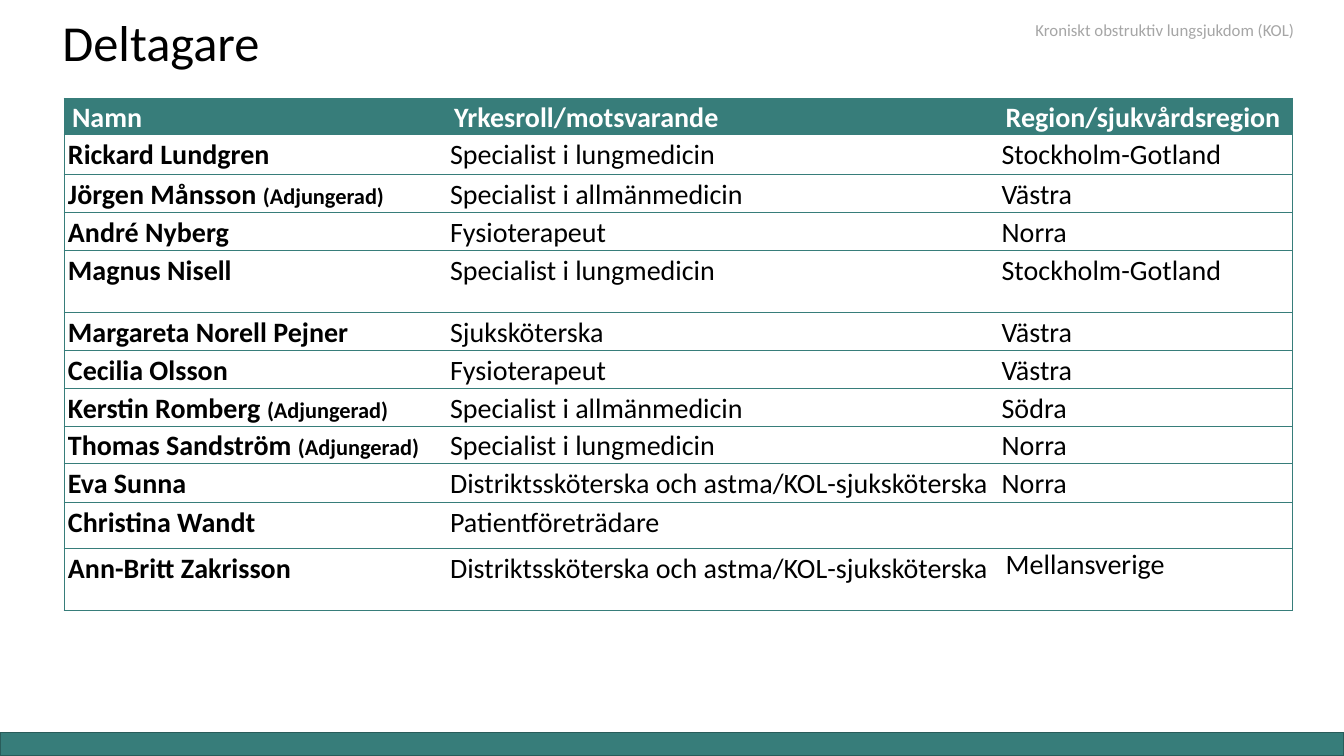
import pptx
import pptx.dml.color
import pptx.enum.shapes
import pptx.enum.text
import pptx.oxml
import pptx.oxml.ns
import pptx.util

Pt = pptx.util.Pt
ANCHOR = pptx.enum.text.MSO_ANCHOR
WIDTH, HEIGHT = pptx.util.Inches(13.33), pptx.util.Inches(7.5)
TEAL, DARK_TEAL, BLACK, WHITE, GREY = "377D7A", "295C5A", "000000", "FFFFFF", "A6A6A6"

# Table columns in % of slide width, rows in % of slide height
COLUMNS = [28.43, 41.04, 21.91]
ROWS = [4.75, 5.33, 5, 5, 8.27, 5, 5, 5, 5, 5.07, 6.13, 8.27]
HEADER = ["Namn", "Yrkesroll/motsvarande", "Region/sjukvårdsregion"]
ADJUNCT = "(Adjungerad)"
PARTICIPANTS = [
    ("Rickard Lundgren", "Specialist i lungmedicin", "Stockholm-Gotland"),
    ("Jörgen Månsson " + ADJUNCT, "Specialist i allmänmedicin", "Västra"),
    ("André Nyberg", "Fysioterapeut", "Norra"),
    ("Magnus Nisell", "Specialist i lungmedicin", "Stockholm-Gotland"),
    ("Margareta Norell Pejner", "Sjuksköterska", "Västra"),
    ("Cecilia Olsson", "Fysioterapeut", "Västra"),
    ("Kerstin Romberg " + ADJUNCT, "Specialist i allmänmedicin", "Södra"),
    ("Thomas Sandström " + ADJUNCT, "Specialist i lungmedicin", "Norra"),
    ("Eva Sunna", "Distriktssköterska och astma/KOL-sjuksköterska", "Norra"),
    ("Christina Wandt", "Patientföreträdare", ""),
    ("Ann-Britt Zakrisson", "Distriktssköterska och astma/KOL-sjuksköterska", "Mellansverige"),
]


def x(share):
    return round(WIDTH * share / 100)


def y(share):
    return round(HEIGHT * share / 100)


def rgb(color):
    return pptx.dml.color.RGBColor.from_string(color)


def apply(obj, **values):
    for name, value in values.items():
        setattr(obj, name, value)


def add_run(p, text, size, color=BLACK, bold=False):
    r = p.add_run()
    r.text = text
    apply(r.font, name="Calibri", size=Pt(size), bold=bold)
    r.font.color.rgb = rgb(color)


def add_text(s, left, top, width, height, text, size, color=BLACK,
             spacing=None, anchor=ANCHOR.TOP):
    tf = s.shapes.add_textbox(x(left), y(top), x(width), y(height)).text_frame
    apply(tf, word_wrap=True, vertical_anchor=anchor,
          margin_left=0, margin_right=0, margin_top=0, margin_bottom=0)
    p = tf.paragraphs[0]
    p.line_spacing = spacing
    add_run(p, text, size, color)


def add_bar(s, left, top, width, height):
    sp = s.shapes.add_shape(pptx.enum.shapes.MSO_SHAPE.RECTANGLE,
                            x(left), y(top), x(width), y(height))
    sp.shadow.inherit = False
    sp.fill.solid()
    sp.fill.fore_color.rgb = rgb(TEAL)
    sp.line.color.rgb = rgb(DARK_TEAL)
    sp.line.width = Pt(1)


def set_borders(cell, sides):
    for side in "LRTB":
        fill = f'<a:solidFill><a:srgbClr val="{TEAL}"/></a:solidFill>' if side in sides else "<a:noFill/>"
        cell._tc.get_or_add_tcPr().append(pptx.oxml.parse_xml(
            f'<a:ln{side} {pptx.oxml.ns.nsdecls("a")} w="{Pt(0.5)}">{fill}</a:ln{side}>'))


def fill_cell(cell, text, row, column):
    header = row == 0
    last = row == len(ROWS) - 1 and column == len(COLUMNS) - 1
    set_borders(cell, "TB" + {0: "L", len(COLUMNS) - 1: "R"}.get(column, ""))
    if header:
        cell.fill.solid()
        cell.fill.fore_color.rgb = rgb(TEAL)
    else:
        cell.fill.background()
    side = pptx.util.Inches(0.08 if header or last else 0.04)
    apply(cell, margin_left=side, margin_right=side, margin_top=0, margin_bottom=0)
    p = cell.text_frame.paragraphs[0]
    if not last:
        apply(p, line_spacing=1.06 if header else 1.1, space_after=Pt(0 if header else 11))
    color, bold = WHITE if header else BLACK, header or column == 0
    name, adjunct, _ = text.partition(ADJUNCT)
    if name:
        add_run(p, name, 20, color, bold)
    if adjunct:
        add_run(p, adjunct, 16, color, bold)


def add_participants(s, left, top):
    table = s.shapes.add_table(len(ROWS), len(COLUMNS), x(left), y(top),
                               x(sum(COLUMNS)), y(sum(ROWS))).table
    table.horz_banding = False
    for column, width in zip(table.columns, COLUMNS):
        column.width = x(width)
    for i, (height, texts) in enumerate(zip(ROWS, [HEADER, *PARTICIPANTS])):
        table.rows[i].height = y(height)
        for j, text in enumerate(texts):
            fill_cell(table.cell(i, j), text, i, j)


def main():
    prs = pptx.Presentation()
    apply(prs, slide_width=WIDTH, slide_height=HEIGHT)
    s = prs.slides.add_slide(prs.slide_layouts[6])

    # Footer bar
    add_bar(s, 0, 96.93, 100, 3.07)

    # Title, participants and topic
    add_text(s, 4.65, 1.2, 84.77, 9.6, "Deltagare", 36, spacing=0.9, anchor=ANCHOR.MIDDLE)
    add_participants(s, 4.76, 13)
    add_text(s, 77.04, 2.67, 19.8, 2.67, "Kroniskt obstruktiv lungsjukdom (KOL)", 12, GREY)

    prs.save("out.pptx")


if __name__ == "__main__":
    main()
